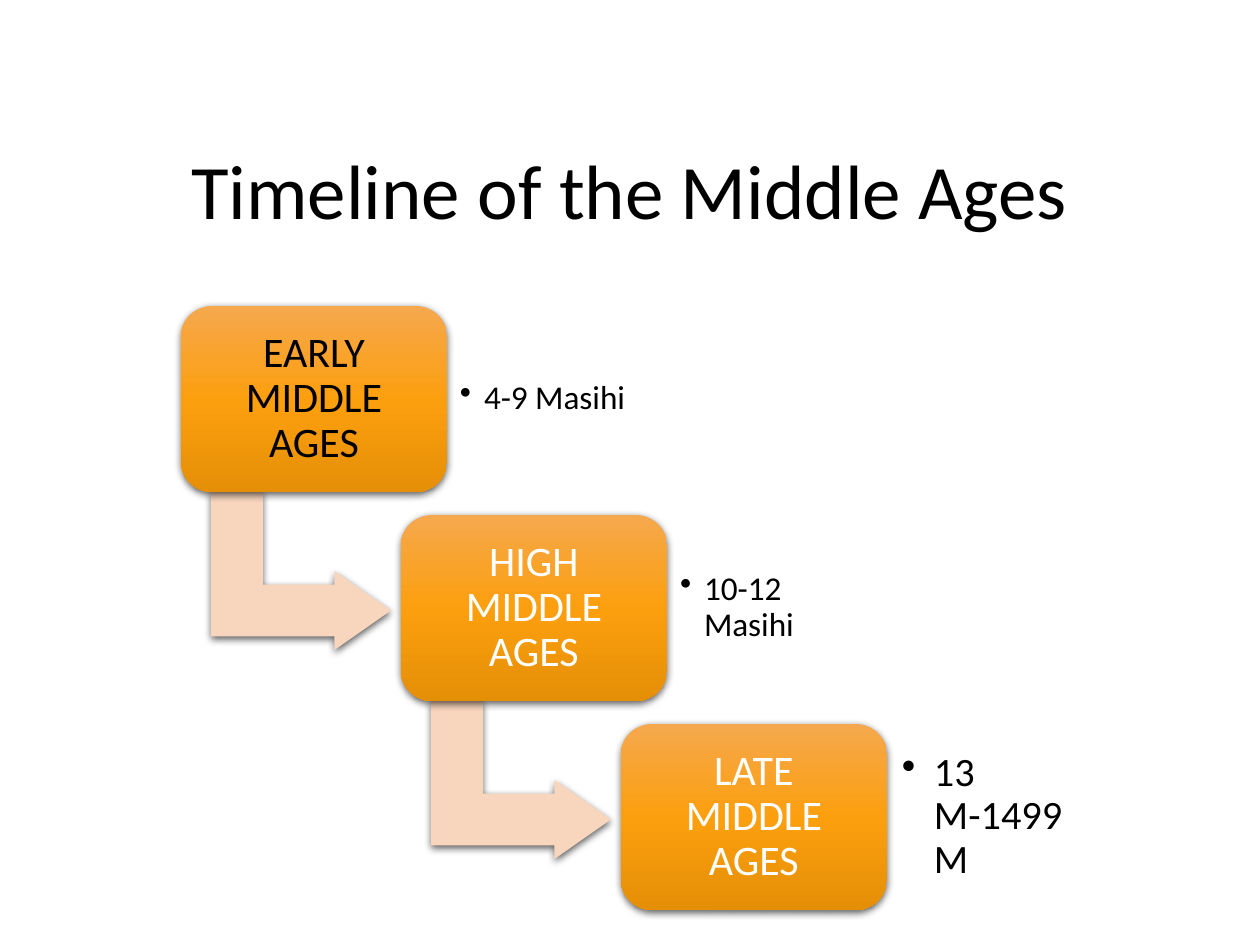
from lxml import etree
from pptx import Presentation
from pptx.dml.color import RGBColor
from pptx.enum.shapes import MSO_SHAPE
from pptx.enum.text import MSO_ANCHOR, PP_ALIGN
from pptx.oxml import parse_xml
from pptx.oxml.ns import nsdecls, qn
from pptx.util import Pt

PX = 7257  # EMU per px at 126 px to the inch
ROUNDED = MSO_SHAPE.ROUNDED_RECTANGLE
BENT_ARROW = MSO_SHAPE.BENT_UP_ARROW
MIDDLE = MSO_ANCHOR.MIDDLE
CENTER, LEFT = PP_ALIGN.CENTER, PP_ALIGN.LEFT

FONT = "Calibri"
BLACK, WHITE, PEACH = "000000", "FFFFFF", "F8D5BD"
ORANGE_STOPS = [(0, "F5A84E"), (50, "FC9F0E"), (100, "E58F07")]

BOX_WIDTH, BOX_HEIGHT = 266, 186
FIRST_LEFT, FIRST_TOP = 181, 306
STEP_RIGHT, STEP_DOWN = 220, 209

# name, name colour, dates, date size, date inset, bullet indent
PERIODS = [
    ("EARLY MIDDLE AGES", BLACK, "4-9 Masihi", 19, 13, 24),
    ("HIGH MIDDLE AGES", WHITE, "10-12 Masihi", 19, 13, 24),
    ("LATE MIDDLE AGES", WHITE, "13 M-1499 M", 23, 15, 32),
]


def px(*lengths):
    return [length * PX for length in lengths]


def color(value):
    return RGBColor.from_string(value)


def write(shape, text, size, text_color, align, inset):
    frame = shape.text_frame
    frame.word_wrap = True
    frame.vertical_anchor = MIDDLE
    frame.margin_left = frame.margin_right = inset * PX
    frame.margin_top = frame.margin_bottom = inset * PX
    frame.text = text
    para = frame.paragraphs[0]
    para.alignment = align
    para.line_spacing = 0.9
    font = para.runs[0].font
    font.name, font.size = FONT, Pt(size)
    font.color.rgb = color(text_color)
    return para


def add_bullet(para, indent):
    properties = para._p.get_or_add_pPr()
    properties.set("marL", str(indent * PX))
    properties.set("indent", str(-indent * PX))
    etree.SubElement(properties, qn("a:buChar"), char="•")


def add_shadow(shape):
    shape.shadow.inherit = False
    effects = shape._element.spPr.find(qn("a:effectLst"))
    effects.append(parse_xml(
        f'<a:outerShdw {nsdecls("a")} blurRad="57150" dist="19050" dir="5400000"'
        f' algn="ctr" rotWithShape="0"><a:srgbClr val="{BLACK}">'
        '<a:alpha val="63000"/></a:srgbClr></a:outerShdw>'))


def fill_gradient(shape, stops):
    """Replace the solid fill with a gradient running from top to bottom."""
    shape.fill.solid()
    solid = shape._element.spPr.find(qn("a:solidFill"))
    marks = "".join(f'<a:gs pos="{place * 1000}"><a:srgbClr val="{value}"/></a:gs>'
                    for place, value in stops)
    gradient = parse_xml(f'<a:gradFill {nsdecls("a")} rotWithShape="1"><a:gsLst>{marks}'
                         '</a:gsLst><a:lin ang="5400000" scaled="0"/></a:gradFill>')
    solid.getparent().replace(solid, gradient)


def add_title(page, left, top, width, height):
    title = page.shapes.title
    title.left, title.top, title.width, title.height = px(left, top, width, height)
    write(title, "Timeline of the Middle Ages", 44, BLACK, CENTER, 13)


def add_step_arrow(page, left, top):
    """Draw the arrow that leads from the box at left, top to the next one."""
    arrow = page.shapes.add_shape(BENT_ARROW, *px(left + 41, top + 175, 158, 180))
    arrow.rotation = 90
    for index, value in enumerate((0.328, 0.25, 0.358)):
        arrow.adjustments[index] = value
    arrow.fill.solid()
    arrow.fill.fore_color.rgb = color(PEACH)
    arrow.line.fill.background()
    add_shadow(arrow)


def add_period(page, left, top, period):
    name, name_color, dates, date_size, inset, indent = period
    box = page.shapes.add_shape(ROUNDED, *px(left, top, BOX_WIDTH, BOX_HEIGHT))
    box.adjustments[0] = 0.167
    fill_gradient(box, ORANGE_STOPS)
    box.line.fill.background()
    add_shadow(box)
    write(box, name, 24, name_color, CENTER, 13)

    label = page.shapes.add_textbox(*px(left + BOX_WIDTH, top + 18, 193, 150))
    add_bullet(write(label, dates, date_size, BLACK, LEFT, inset), indent)


def main():
    deck = Presentation()
    deck.slide_width, deck.slide_height = px(1260, 945)
    page = deck.slides.add_slide(deck.slide_layouts[5])
    add_title(page, 82, 106, 1096, 178)
    for index, period in enumerate(PERIODS):
        left = FIRST_LEFT + index * STEP_RIGHT
        top = FIRST_TOP + index * STEP_DOWN
        if index < len(PERIODS) - 1:
            add_step_arrow(page, left, top)
        add_period(page, left, top, period)
    deck.save("out.pptx")


if __name__ == "__main__":
    main()
